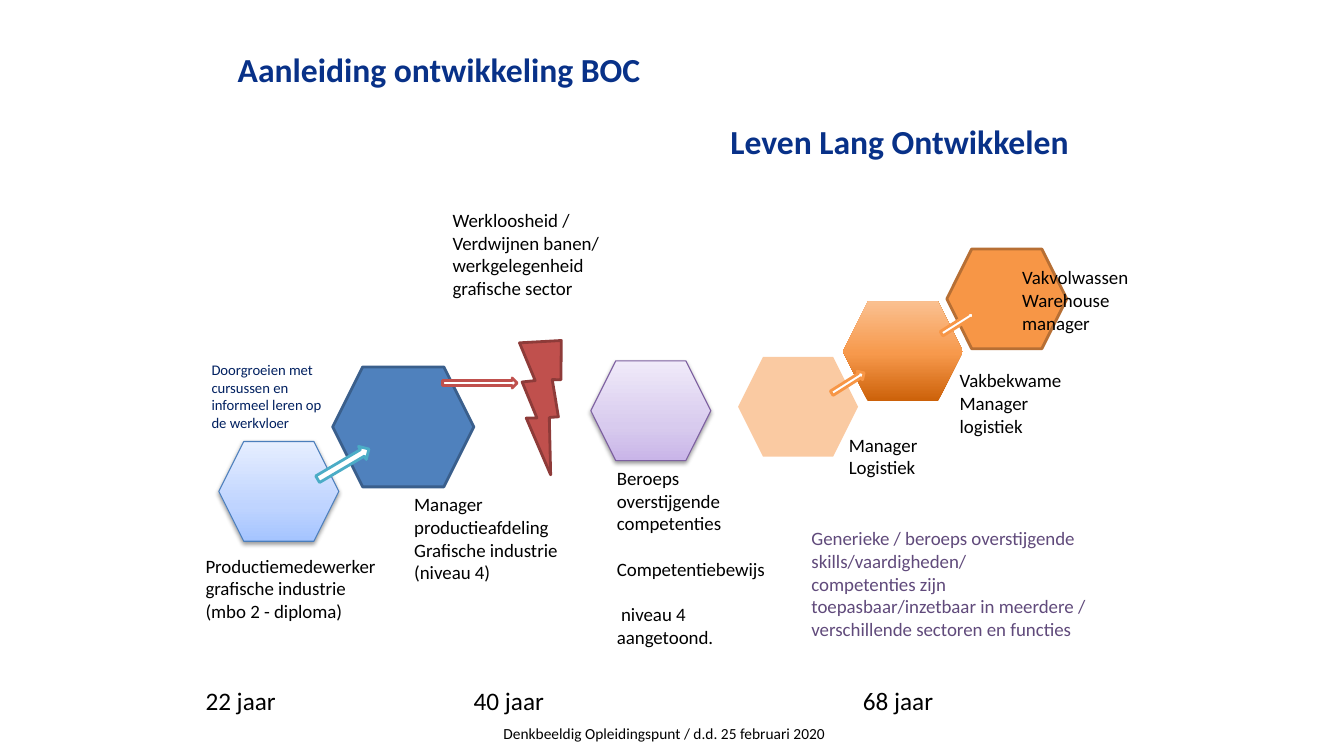
from copy import deepcopy
from dataclasses import dataclass

from lxml import etree
from pptx import Presentation
from pptx.dml.color import RGBColor
from pptx.enum.shapes import MSO_SHAPE
from pptx.enum.text import MSO_ANCHOR, PP_ALIGN
from pptx.oxml.ns import qn
from pptx.slide import Slide
from pptx.util import Inches, Pt

HEXAGON = MSO_SHAPE.HEXAGON
BOLT = MSO_SHAPE.LIGHTNING_BOLT
ARROW = MSO_SHAPE.RIGHT_ARROW
LEFT, CENTER = PP_ALIGN.LEFT, PP_ALIGN.CENTER
TOP, MIDDLE = MSO_ANCHOR.TOP, MSO_ANCHOR.MIDDLE

COLORS = {
    "white": "FFFFFF", "black": "000000", "heading": "083188",
    "navy": "002060", "plum": "604A7B",
    "blue": "4F81BD", "blue_edge": "3A5F8C", "pale_blue_edge": "4B7EBC",
    "red": "C0504D", "red_edge": "8E3B39", "purple_edge": "7D60A0",
    "orange": "F79646", "orange_edge": "B76F34", "teal": "4BACC6",
    "blue_low": "A4C4FF", "blue_mid": "BFD4FF", "blue_high": "E6EEFF",
    "purple_low": "C9B5E8", "purple_mid": "D8CBEE", "purple_high": "F0EAF9",
    "orange_low": "CC6109", "orange_mid": "F7994C", "orange_high": "FAC090",
}

Area = tuple[float, float, float, float]
HEXAGON_SIZE = (1.19, 0.99)
SMALL_ARROW = (0.38, 0.1)


@dataclass
class Figure:
    kind: int
    area: Area
    fill: str = ""
    line: str = ""
    line_width: float = 2
    rotation: float = 0
    gradient: str = ""
    middle_stop: float = 0.35
    opacity: int = 100
    shadow: bool = False


@dataclass
class Label:
    area: Area
    paragraphs: list[str]
    size: float = 13.5
    color: str = "black"
    bold: bool = False
    align: int = LEFT
    anchor: int = TOP
    space_before: float = 0
    tabs: tuple[float, ...] = ()


FIGURES = [
    Figure(HEXAGON, (2.17, 4.38, *HEXAGON_SIZE), line="pale_blue_edge",
           line_width=0.75, gradient="blue", shadow=True),
    Figure(HEXAGON, (3.3, 3.64, 1.4, 1.19), "blue", "blue_edge"),
    Figure(HEXAGON, (8.36, 2.99, *HEXAGON_SIZE), gradient="orange", middle_stop=0.48),
    Figure(HEXAGON, (5.86, 3.58, *HEXAGON_SIZE), line="purple_edge",
           line_width=0.75, gradient="purple", shadow=True),
    Figure(HEXAGON, (7.32, 3.54, *HEXAGON_SIZE), "orange", opacity=50),
    Figure(BOLT, (4.91, 3.35, 0.9, 1.22), "red", "red_edge", rotation=28.7),
    Figure(HEXAGON, (9.39, 2.47, *HEXAGON_SIZE), "orange", "orange_edge"),
    Figure(ARROW, (3.11, 4.53, 0.59, 0.15), "white", "teal", rotation=329.5),
    Figure(ARROW, (4.39, 3.75, 0.74, 0.1), "white", "red"),
    Figure(ARROW, (8.22, 3.75, *SMALL_ARROW), "white", "orange", rotation=327.7),
    Figure(ARROW, (9.31, 3.16, *SMALL_ARROW), "white", "orange", rotation=327.7),
]

LABELS = [
    Label((7.07, 1.06, 4.19, 0.68), [" Leven Lang Ontwikkelen"], 24, "heading",
          bold=True, anchor=MIDDLE),
    Label((1.94, 5.45, 2.07, 0.78),
          ["Productiemedewerker grafische industrie", "(mbo 2 - diploma)"]),
    Label((4.01, 4.84, 1.87, 1.01),
          ["Manager productieafdeling Grafische industrie", "(niveau 4)"]),
    Label((4.39, 2.02, 1.68, 1.24),
          ["Werkloosheid /", "Verdwijnen banen/", "werkgelegenheid grafische sector"]),
    Label((6.02, 4.58, 1.8, 1.9),
          ["Beroeps overstijgende competenties", "Competentiebewijs",
           " niveau 4 aangetoond."], space_before=16.2),
    Label((8.32, 4.25, 1.46, 0.56), ["Manager Logistiek"]),
    Label((9.42, 3.61, 1.53, 0.78), ["Vakbekwame", "Manager logistiek"]),
    Label((7.95, 5.18, 2.96, 1.24),
          ["Generieke / beroeps overstijgende skills/vaardigheden/",
           "competenties zijn toepasbaar/inzetbaar in meerdere / "
           "verschillende sectoren en functies"], color="plum"),
    Label((10.04, 2.59, 1.43, 0.78), ["Vakvolwassen Warehouse manager"]),
    Label((2, 3.53, 1.36, 1.04),
          ["Doorgroeien met cursussen en informeel leren op de werkvloer"],
          10.5, "navy"),
    Label((2.26, 0.44, 6.8, 0.5), ["Aanleiding ontwikkeling BOC"], 24, "heading", bold=True),
    Label((1.94, 6.75, 8.95, 0.4), ["22 jaar\t40 jaar\t68 jaar"], 18, tabs=(2.66, 6.52)),
    Label((4.09, 7.13, 5, 0.29), ["Denkbeeldig Opleidingspunt / d.d. 25 februari 2020"],
          11, align=CENTER),
]


def rgb(name: str) -> RGBColor:
    return RGBColor.from_string(COLORS[name])


def apply_gradient(shape, figure: Figure) -> None:
    shape.fill.gradient()
    shape.fill.gradient_angle = 90
    stop_list = shape._element.spPr.find(".//" + qn("a:gsLst"))
    stop_list.insert(1, deepcopy(stop_list[0]))
    levels = {"low": 0, "mid": figure.middle_stop, "high": 1}
    for stop, (level, position) in zip(shape.fill.gradient_stops, levels.items()):
        stop.position = position
        stop.color.rgb = rgb(f"{figure.gradient}_{level}")


def add_shadow(shape) -> None:
    effects = shape._element.spPr.find(qn("a:effectLst"))
    outer = etree.SubElement(effects, qn("a:outerShdw"), blurRad="40000",
                             dist="20000", dir="5400000", rotWithShape="0")
    color = etree.SubElement(outer, qn("a:srgbClr"), val=COLORS["black"])
    etree.SubElement(color, qn("a:alpha"), val="38000")


def draw_figure(page: Slide, figure: Figure) -> None:
    shape = page.shapes.add_shape(figure.kind, *map(Inches, figure.area))
    shape.rotation = figure.rotation
    shape.shadow.inherit = False
    if figure.gradient:
        apply_gradient(shape, figure)
    else:
        shape.fill.solid()
        shape.fill.fore_color.rgb = rgb(figure.fill)
    if figure.opacity < 100:
        color = shape._element.spPr.find(qn("a:solidFill"))[0]
        etree.SubElement(color, qn("a:alpha"), val=str(figure.opacity * 1000))
    if figure.line:
        shape.line.color.rgb = rgb(figure.line)
        shape.line.width = Pt(figure.line_width)
    else:
        shape.line.fill.background()
    if figure.shadow:
        add_shadow(shape)


def draw_label(page: Slide, label: Label) -> None:
    frame = page.shapes.add_textbox(*map(Inches, label.area)).text_frame
    frame.word_wrap = True
    frame.vertical_anchor = label.anchor
    font_format = {"name": "Calibri", "size": Pt(label.size), "bold": label.bold}
    for index, text in enumerate(label.paragraphs):
        para = frame.add_paragraph() if index else frame.paragraphs[0]
        para.alignment = label.align
        para.space_before = Pt(label.space_before if index else 0)
        if label.tabs:
            tab_list = etree.SubElement(para._p.get_or_add_pPr(), qn("a:tabLst"))
            for position in label.tabs:
                etree.SubElement(tab_list, qn("a:tab"), pos=str(Inches(position)), algn="l")
        span = para.add_run()
        span.text = text
        for attribute, value in font_format.items():
            setattr(span.font, attribute, value)
        span.font.color.rgb = rgb(label.color)


def main() -> None:
    deck = Presentation()
    deck.slide_width, deck.slide_height = Inches(13.33), Inches(7.5)
    page = deck.slides.add_slide(deck.slide_layouts[6])
    for figure in FIGURES:
        draw_figure(page, figure)
    for label in LABELS:
        draw_label(page, label)
    deck.save("out.pptx")


if __name__ == "__main__":
    main()
